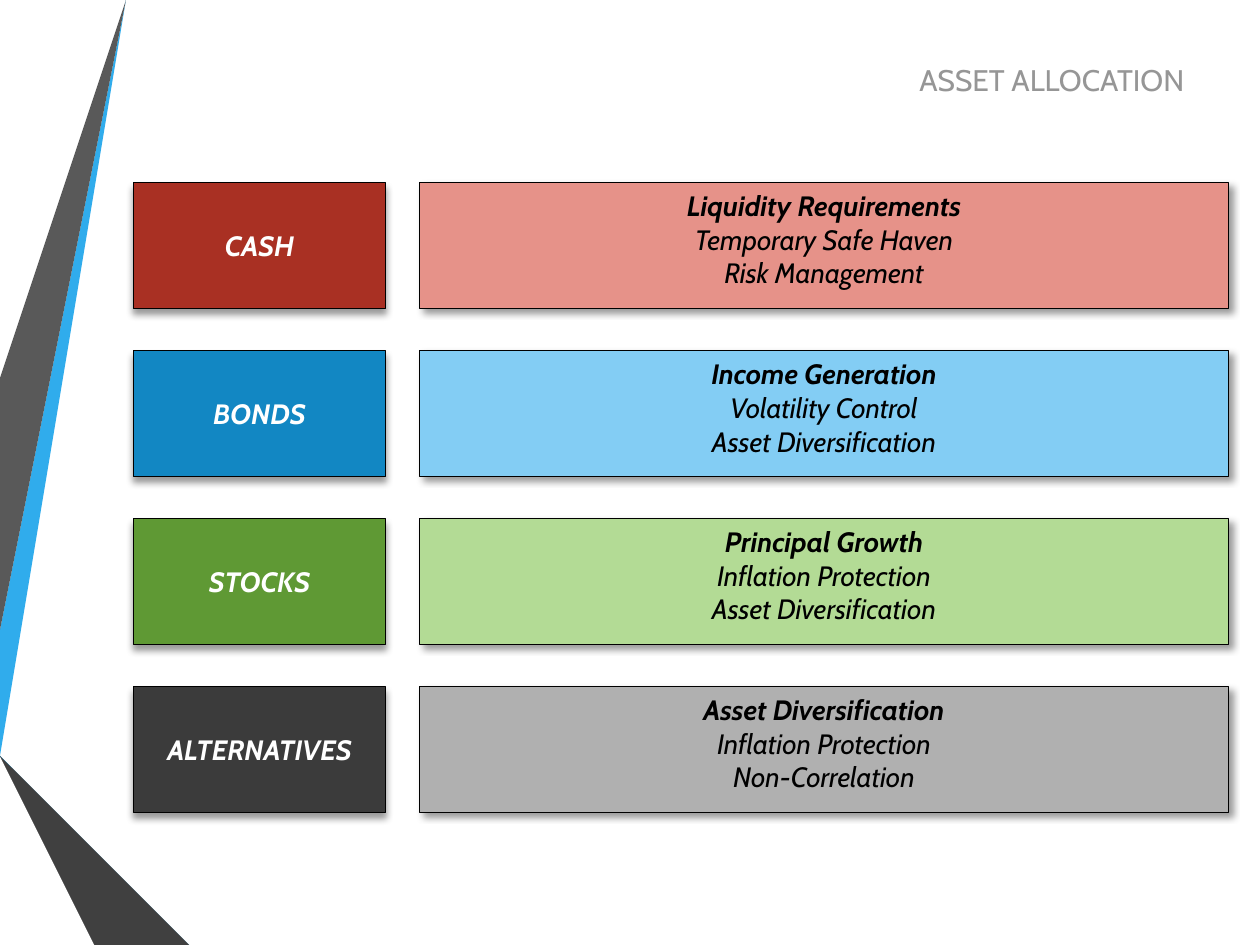
from dataclasses import dataclass

from lxml import etree
from pptx import Presentation
from pptx.dml.color import RGBColor
from pptx.enum.shapes import MSO_SHAPE
from pptx.enum.text import MSO_ANCHOR, PP_ALIGN
from pptx.oxml.ns import qn
from pptx.util import Inches, Pt

RECTANGLE = MSO_SHAPE.RECTANGLE
TOP, MIDDLE = MSO_ANCHOR.TOP, MSO_ANCHOR.MIDDLE
CENTER, RIGHT = PP_ALIGN.CENTER, PP_ALIGN.RIGHT


@dataclass(frozen=True)
class Theme:
    font: str = "Cabin"
    title_size: int = 17
    body_size: int = 16
    title: str = "969696"
    light: str = "FFFFFF"
    dark: str = "000000"
    sky: str = "30ACEC"
    blue: str = "1287C3"
    navy: str = "0C5A82"
    gray: str = "595959"
    charcoal: str = "404040"
    black: str = "262626"


@dataclass(frozen=True)
class Grid:
    """Rows of asset classes, in inches."""
    top: float = 1.45
    pitch: float = 4 / 3
    row_height: float = 1
    label_left: float = 1.06
    label_width: float = 2
    purpose_left: float = 3.33
    purpose_width: float = 6.42

    def row_top(self, row: int) -> float:
        return self.top + row * self.pitch


@dataclass(frozen=True)
class Box:
    left: float
    top: float
    width: float
    height: float

    def emu(self) -> list:
        return [Inches(v) for v in (self.left, self.top, self.width, self.height)]


@dataclass(frozen=True)
class AssetClass:
    name: str
    color: str
    tint: str
    purposes: tuple


@dataclass(frozen=True)
class Ribbon:
    color: str
    points: tuple


THEME = Theme()
GRID = Grid()
WIDTH, HEIGHT = 10, 7.5

ASSETS = (
    AssetClass("CASH", "A93023", "E69289",
               ("Liquidity Requirements", "Temporary Safe Haven", "Risk Management")),
    AssetClass("BONDS", THEME.blue, "83CDF4",
               ("Income Generation", "Volatility Control", "Asset Diversification")),
    AssetClass("STOCKS", "5F9934", "B3DB95",
               ("Principal Growth", "Inflation Protection", "Asset Diversification")),
    AssetClass("ALTERNATIVES", "3B3B3B", "B0B0B0",
               ("Asset Diversification", "Inflation Protection", "Non-Correlation")),
)

RIBBONS = (
    Ribbon(THEME.sky, ((0, 5.44), (0, 5.75), (0.22, 5.79), (1.17, 0), (0.89, 0))),
    Ribbon(THEME.gray, ((0.83, 0), (0.55, 0), (0, 3.36), (0, 5.06))),
    Ribbon(THEME.black, ((0, 6.19), (0, 6.21), (0.93, HEIGHT), (0.99, HEIGHT))),
    Ribbon(THEME.navy, ((0, 5.79), (0, 5.8), (1.56, HEIGHT), (1.63, HEIGHT))),
    Ribbon(THEME.blue, ((0, 5.79), (1.63, HEIGHT), (2.33, HEIGHT), (0.22, 5.79), (0, 5.75))),
    Ribbon(THEME.charcoal, ((0, 6.19), (0.99, HEIGHT), (1.51, HEIGHT), (0, 5.86))),
)


def fill_solid(shape, color: str) -> None:
    shape.fill.solid()
    shape.fill.fore_color.rgb = RGBColor.from_string(color)
    shape.shadow.inherit = False


def add_shadow(shape, degrees: int) -> None:
    effects = shape._element.spPr.find(qn("a:effectLst"))
    shadow = etree.SubElement(
        effects, qn("a:outerShdw"), blurRad=str(Pt(4)), dist=str(Pt(3)),
        dir=str(degrees * 60000), algn="tl", rotWithShape="0")
    color = etree.SubElement(shadow, qn("a:srgbClr"), val=THEME.dark)
    etree.SubElement(color, qn("a:alpha"), val="40000")


def write_lines(shape, lines: tuple, size: int, color: str, alignment,
                anchor, bold_first: bool = True, italic: bool = True) -> None:
    frame = shape.text_frame
    frame.word_wrap = True
    frame.vertical_anchor = anchor
    frame.text = "\n".join(lines)
    for index, paragraph in enumerate(frame.paragraphs):
        paragraph.alignment = alignment
        font = paragraph.font
        font.name, font.size = THEME.font, Pt(size)
        font.bold = bold_first and index == 0
        font.italic = italic
        font.color.rgb = RGBColor.from_string(color)


def add_ribbon(slide, ribbon: Ribbon) -> None:
    start, *others = ribbon.points
    builder = slide.shapes.build_freeform(*start, scale=Inches(1))
    builder.add_line_segments(others, close=True)
    shape = builder.convert_to_shape()
    fill_solid(shape, ribbon.color)
    shape.line.fill.background()


def add_panel(slide, box: Box, color: str, shadow_degrees: int):
    panel = slide.shapes.add_shape(RECTANGLE, *box.emu())
    fill_solid(panel, color)
    panel.line.color.rgb = RGBColor.from_string(THEME.dark)
    panel.line.width = Pt(0.75)
    add_shadow(panel, shadow_degrees)
    return panel


def add_asset_row(slide, row: int, asset: AssetClass) -> None:
    top = GRID.row_top(row)
    label_box = Box(GRID.label_left, top, GRID.label_width, GRID.row_height)
    add_panel(slide, label_box, asset.color, 90)

    # Asset name, centred on its panel
    text_height = 0.37
    name_box = Box(GRID.label_left, top + (GRID.row_height - text_height) / 2,
                   GRID.label_width, text_height)
    name = slide.shapes.add_textbox(*name_box.emu())
    write_lines(name, (asset.name,), THEME.body_size, THEME.light, CENTER, MIDDLE)

    # Purposes, the main one in bold
    purpose_box = Box(GRID.purpose_left, top, GRID.purpose_width, GRID.row_height)
    purposes = add_panel(slide, purpose_box, asset.tint, 45)
    write_lines(purposes, asset.purposes, THEME.body_size, THEME.dark, CENTER, TOP)


def main() -> None:
    presentation = Presentation()
    presentation.slide_width, presentation.slide_height = Inches(WIDTH), Inches(HEIGHT)
    slide = presentation.slides.add_slide(presentation.slide_layouts[6])

    # Folded ribbons on the left edge
    for ribbon in RIBBONS:
        add_ribbon(slide, ribbon)

    # Title
    title = slide.shapes.add_textbox(*Box(1.23, 0.44, 8.27, 0.39).emu())
    write_lines(title, ("ASSET ALLOCATION",), THEME.title_size, THEME.title,
                RIGHT, MIDDLE, bold_first=False, italic=False)

    # Asset classes and what they are for
    for row, asset in enumerate(ASSETS):
        add_asset_row(slide, row, asset)

    presentation.save("out.pptx")


if __name__ == "__main__":
    main()
